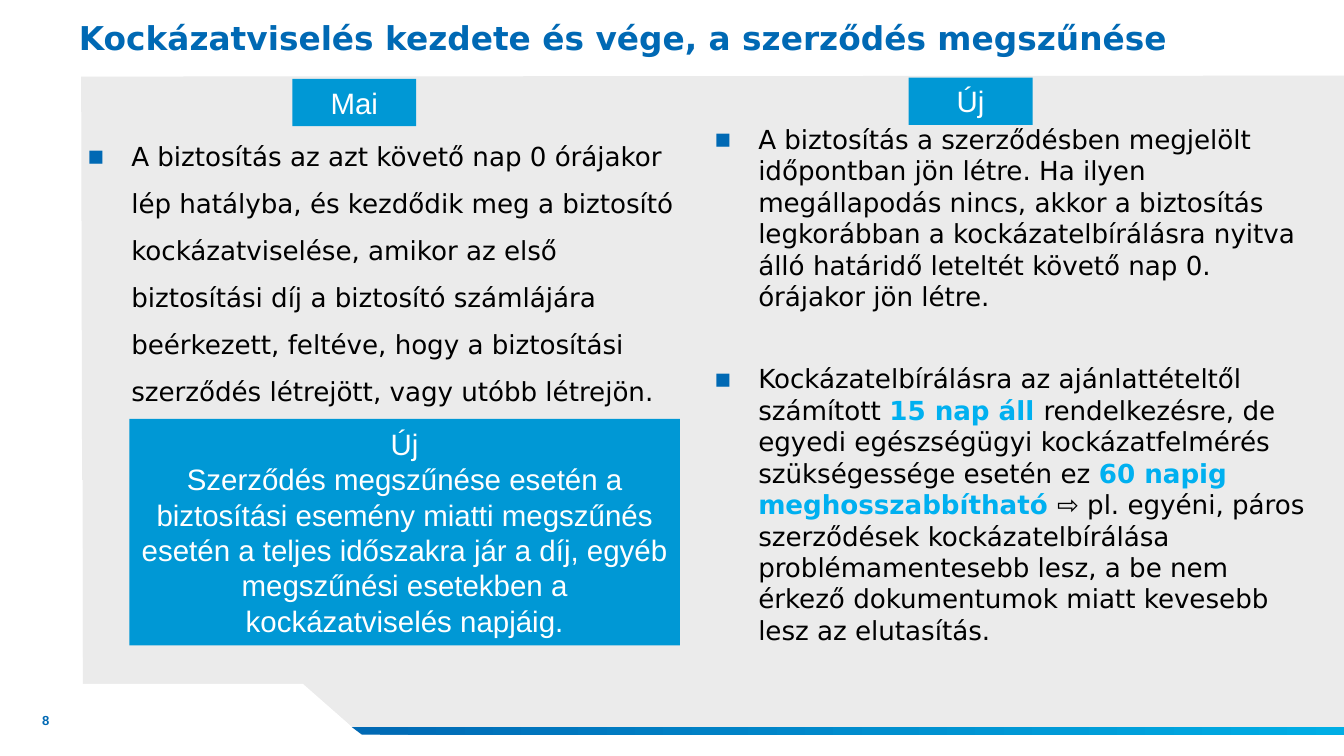
from lxml.etree import SubElement
from pptx import Presentation
from pptx.dml.color import RGBColor
from pptx.enum.shapes import MSO_SHAPE
from pptx.enum.text import MSO_ANCHOR, PP_ALIGN
from pptx.oxml.ns import qn
from pptx.util import Cm, Pt

WIDE, HIGH = 28.96, 16.28
BLUE, SKY, CYAN, GREY = "0069B4", "0098D5", "00B0F0", "EBEBEB"
WHITE, BLACK = "FFFFFF", "000000"
SANS, ARIAL = "DejaVu Sans", "Arial"

PANEL = [(1.75, 1.65), (1.78, 14.73), (6.55, 14.76), (7.77, 15.82),
         (WIDE, 15.82), (WIDE, 1.63)]
NOTCH = [(1.78, 10.34), (0, 10.34), (0, HIGH), (8.81, HIGH), (8.84, 15.82),
         (7.77, 15.82), (6.53, 14.73), (1.78, 14.73)]
BAR = [(7.57, 15.65), (WIDE, 15.65), (WIDE, 15.82), (7.8, 15.82)]

TITLE = "Kockázatviselés kezdete és vége, a szerződés megszűnése"
START = [("A biztosítás az azt követő nap 0 órájakor lép hatályba, és kezdődik meg "
          "a biztosító kockázatviselése, amikor az első biztosítási díj a biztosító "
          "számlájára beérkezett, feltéve, hogy a biztosítási szerződés létrejött, "
          "vagy utóbb létrejön.", False)]
TERM = [("A biztosítás a szerződésben megjelölt időpontban jön létre. Ha ilyen "
         "megállapodás nincs, akkor a biztosítás legkorábban a kockázatelbírálásra "
         "nyitva álló határidő leteltét követő nap 0. órájakor jön létre.", False)]
RISK = [("Kockázatelbírálásra az ajánlattételtől számított ", False),
        ("15 nap áll ", True),
        ("rendelkezésre, de egyedi egészségügyi kockázatfelmérés szükségessége "
         "esetén ez ", False),
        ("60 napig meghosszabbítható ", True),
        ("⇨ pl. egyéni, páros szerződések kockázatelbírálása problémamentesebb lesz, "
         "a be nem érkező dokumentumok miatt kevesebb lesz az elutasítás.", False)]
END = ("Szerződés megszűnése esetén a biztosítási esemény miatti megszűnés esetén a "
       "teljes időszakra jár a díj, egyéb megszűnési esetekben a kockázatviselés "
       "napjáig.")
TAGS = [((6.3, 1.7, 2.67, 1.02), ["Mai"]),
        ((19.58, 1.67, 2.67, 1.02), ["Új"]),
        ((2.79, 9.02, 11.86, 4.88), ["Új", END])]


def color(code):
    """Turn a hex string into a colour."""
    return RGBColor.from_string(code)


def apply(item, form):
    """Set each attribute in form on item."""
    for key, value in form.items():
        setattr(item, key, value)


def write(para, text, size, code, face, bold=False):
    """Add one styled run to a paragraph."""
    run = para.add_run()
    run.text = text
    apply(run.font, {"size": Pt(size), "name": face, "bold": bold})
    run.font.color.rgb = color(code)


def finish(shape, code):
    """Give a shape a flat fill without line or shadow."""
    shape.shadow.inherit = False
    shape.line.fill.background()
    shape.fill.solid()
    shape.fill.fore_color.rgb = color(code)


def outline(slide, points, code):
    """Draw a filled polygon through points in centimetres."""
    first, *rest = [(Cm(x), Cm(y)) for x, y in points]
    build = slide.shapes.build_freeform(*first)
    build.add_line_segments(rest)
    shape = build.convert_to_shape()
    finish(shape, code)
    return shape


def blend(shape, codes):
    """Fill a shape with a gradient from left to right."""
    shape.fill.gradient()
    shape.fill.gradient_angle = 0
    for stop, code, place in zip(shape.fill.gradient_stops, codes, (0, 1)):
        stop.color.rgb = color(code)
        stop.position = place


def frame(slide, box, **form):
    """Add a text box and return its text frame."""
    body = slide.shapes.add_textbox(*map(Cm, box)).text_frame
    apply(body, {"word_wrap": True, **form})
    return body


def bullet(para, parts, **form):
    """Fill a paragraph with a square bullet and its text parts."""
    props = para._p.get_or_add_pPr()
    apply(para, form)
    props.set("marL", str(Cm(0.95)))
    props.set("indent", str(-Cm(0.95)))
    tint = SubElement(props, qn("a:buClr"))
    SubElement(tint, qn("a:srgbClr"), val=BLUE)
    SubElement(props, qn("a:buFont"), typeface=SANS)
    SubElement(props, qn("a:buChar"), char="▪")
    for text, strong in parts:
        write(para, text, 16, CYAN if strong else BLACK, SANS, strong)


def tag(slide, box, lines):
    """Add a blue box with centred white lines."""
    shape = slide.shapes.add_shape(MSO_SHAPE.RECTANGLE, *map(Cm, box))
    finish(shape, SKY)
    body = shape.text_frame
    apply(body, {"word_wrap": True, "vertical_anchor": MSO_ANCHOR.MIDDLE})
    for num, line in enumerate(lines):
        para = body.add_paragraph() if num else body.paragraphs[0]
        para.alignment = PP_ALIGN.CENTER
        write(para, line, 18, WHITE, ARIAL)


def main():
    """Build the slide and save it."""
    deck = Presentation()
    apply(deck, {"slide_width": Cm(WIDE), "slide_height": Cm(HIGH)})
    slide = deck.slides.add_slide(deck.slide_layouts[6])

    outline(slide, PANEL, GREY)
    outline(slide, NOTCH, WHITE)
    blend(outline(slide, BAR, BLUE), (BLUE, "00AEE5"))

    page = frame(slide, (0.66, 15.21, 1.07, 0.61), word_wrap=False)
    write(page.paragraphs[0], "8", 8, BLUE, ARIAL, True)
    head = frame(slide, (1.45, 0, 25.93, 1.63), vertical_anchor=MSO_ANCHOR.MIDDLE)
    write(head.paragraphs[0], TITLE, 20, BLUE, SANS, True)

    left = frame(slide, (1.63, 2.8, 13.54, 5.97),
                 vertical_anchor=MSO_ANCHOR.BOTTOM, margin_bottom=0)
    bullet(left.paragraphs[0], START, line_spacing=1.5)
    right = frame(slide, (15.14, 2.53, 13.54, 11.6))
    bullet(right.paragraphs[0], TERM)
    bullet(right.add_paragraph(), RISK, space_before=Pt(31))

    for box, lines in TAGS:
        tag(slide, box, lines)
    deck.save("out.pptx")


if __name__ == "__main__":
    main()
